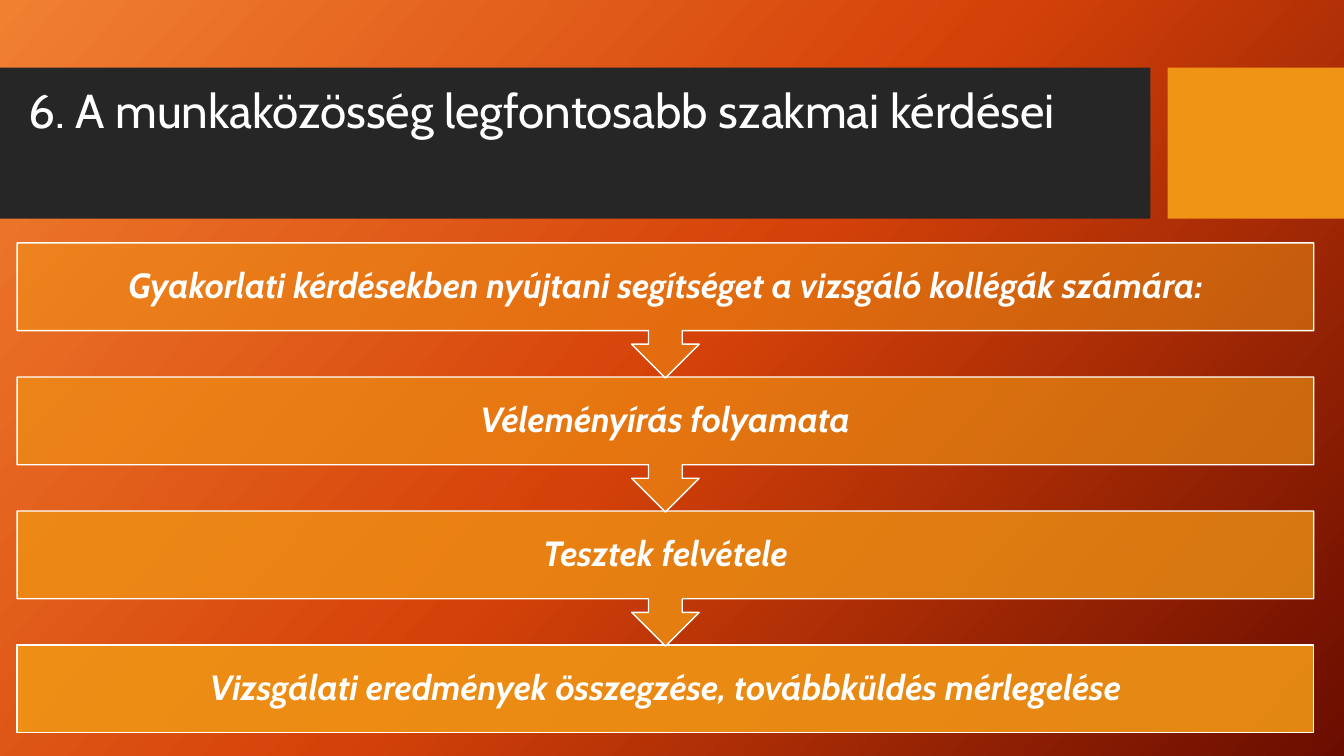
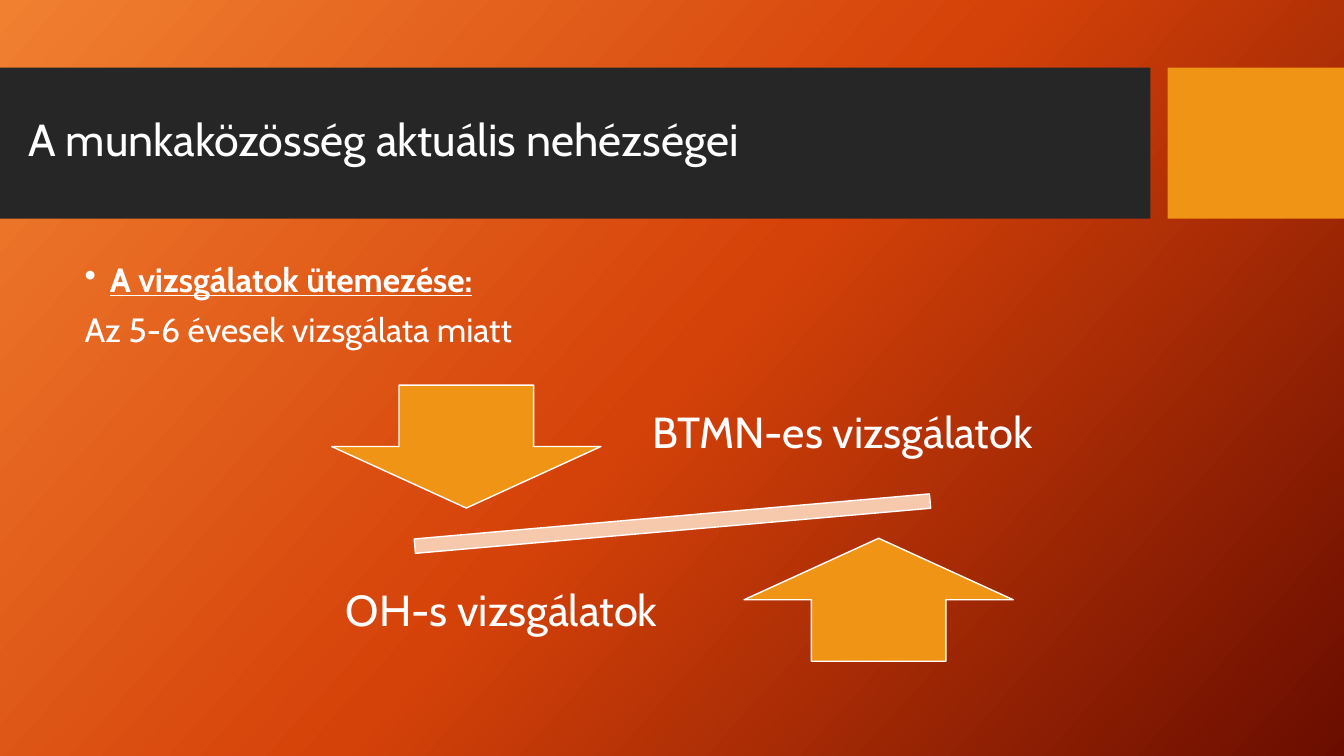
import copy
from dataclasses import dataclass

import pptx
import pptx.dml.color
import pptx.enum.shapes
import pptx.enum.text
import pptx.oxml
import pptx.oxml.ns
import pptx.util
from pptx.dml.color import RGBColor
from pptx.util import Inches

SHAPE = pptx.enum.shapes.MSO_SHAPE
ALIGN = pptx.enum.text.PP_ALIGN
ANCHOR = pptx.enum.text.MSO_ANCHOR

FONT = "Cabin"
WHITE = RGBColor(0xFF, 0xFF, 0xFF)
CHARCOAL = RGBColor(0x26, 0x26, 0x26)
AMBER = RGBColor(0xF0, 0x94, 0x15)
PEACH = RGBColor(0xF6, 0xC8, 0xAC)
BACKGROUND = (
    (0, RGBColor(0xF1, 0x80, 0x31)),
    (0.5, RGBColor(0xD5, 0x42, 0x09)),
    (1, RGBColor(0x6A, 0x0D, 0x00)),
)


@dataclass
class Box:
    left: float
    top: float
    width: float
    height: float

    def lengths(self):
        return [Inches(v) for v in (self.left, self.top, self.width, self.height)]


@dataclass
class Style:
    size: float
    bold: bool = False
    italic: bool = False
    underline: bool = False


@dataclass
class Step:
    text: str
    opacity: int


@dataclass
class Part:
    kind: int
    box: Box
    color: RGBColor = AMBER
    rotation: float = 0


@dataclass
class Label:
    text: str
    box: Box


TITLE_BAND = Box(0, 0.67, 11.41, 1.5)
ACCENT_BAND = Box(11.58, 0.67, 1.75, 1.5)
TITLE_BOX = Box(0.18, 0.82, 11.09, 1.18)
BODY_BOX = Box(0.74, 2.56, 10.51, 3.94)

STEP_STYLE = Style(25, bold=True, italic=True)
STEP_LEFT, STEP_TOP, STEP_WIDTH = 0.17, 2.41, 12.86
STEP_PITCH, CALLOUT_HEIGHT, BAR_HEIGHT = 1.33, 1.34, 0.87
STEPS = (
    Step("Gyakorlati kérdésekben nyújtani segítséget a vizsgáló kollégák számára:", 50),
    Step("Véleményírás folyamata", 63),
    Step("Tesztek felvétele", 77),
    Step("Vizsgálati eredmények összegzése, továbbküldés mérlegelése", 90),
)

SEESAW = (
    Part(SHAPE.MATH_MINUS, Box(3.18, 4.89, 6.98, 0.61), PEACH, 355),
    Part(SHAPE.DOWN_ARROW, Box(3.29, 3.82, 2.67, 1.22)),
    Part(SHAPE.UP_ARROW, Box(7.38, 5.34, 2.67, 1.22)),
)
SEESAW_LABELS = (
    Label("BTMN-es vizsgálatok", Box(6.01, 3.67, 4.69, 1.28)),
    Label("OH-s vizsgálatok", Box(2.67, 5.44, 4.61, 1.28)),
)


def set_background(master) -> None:
    fill = master.background.fill
    fill.gradient()
    fill.gradient_angle = 318
    stops = master.element.xpath("p:cSld/p:bg//a:gsLst")[0]
    stops.append(copy.deepcopy(stops[-1]))
    for stop, (position, color) in zip(fill.gradient_stops, BACKGROUND):
        stop.position = position
        stop.color.rgb = color


def add_figure(s, kind: int, box: Box, color: RGBColor, outlined: bool = True):
    sp = s.shapes.add_shape(kind, *box.lengths())
    sp.shadow.inherit = False
    sp.fill.solid()
    sp.fill.fore_color.rgb = color
    if outlined:
        sp.line.color.rgb = WHITE
        sp.line.width = pptx.util.Pt(1)
    else:
        sp.line.fill.background()
    return sp


def set_opacity(sp, percent: int) -> None:
    color = sp.element.spPr.xpath("a:solidFill/a:srgbClr")[0]
    alpha = pptx.oxml.parse_xml(
        f'<a:alpha {pptx.oxml.ns.nsdecls("a")} val="{percent * 1000}"/>')
    color.append(alpha)


def set_frame(tf, anchor, inset: float | None = None) -> None:
    tf.word_wrap = True
    tf.vertical_anchor = anchor
    if inset is not None:
        tf.margin_left = tf.margin_right = Inches(inset)
        tf.margin_top = tf.margin_bottom = Inches(inset)


def write(p, text: str, style: Style, align=ALIGN.LEFT) -> None:
    p.alignment = align
    p.line_spacing = 0.9
    r = p.add_run()
    r.text = text
    r.font.name = FONT
    r.font.size = pptx.util.Pt(style.size)
    r.font.bold = style.bold
    r.font.italic = style.italic
    r.font.underline = style.underline
    r.font.color.rgb = WHITE


def add_bullet(p) -> None:
    pPr = p._p.get_or_add_pPr()
    pPr.set("marL", str(Inches(0.25)))
    pPr.set("indent", str(Inches(-0.25)))
    pPr.append(pptx.oxml.parse_xml(
        f'<a:buChar {pptx.oxml.ns.nsdecls("a")} char="•"/>'))


def add_text_frame(s, box: Box, anchor, inset: float | None = None):
    tf = s.shapes.add_textbox(*box.lengths()).text_frame
    set_frame(tf, anchor, inset)
    return tf


def add_titled_slide(prs, title: str, size: float, anchor):
    s = prs.slides.add_slide(prs.slide_layouts[6])
    add_figure(s, SHAPE.RECTANGLE, TITLE_BAND, CHARCOAL, outlined=False)
    add_figure(s, SHAPE.RECTANGLE, ACCENT_BAND, AMBER, outlined=False)
    tf = add_text_frame(s, TITLE_BOX, anchor)
    write(tf.paragraphs[0], title, Style(size))
    return s


def build_questions(prs) -> None:
    s = add_titled_slide(
        prs, "6. A munkaközösség legfontosabb szakmai kérdései", 34, ANCHOR.TOP)
    # The lower steps go first so that each arrow tip lies over the next bar.
    for i, step in reversed(list(enumerate(STEPS))):
        last = i == len(STEPS) - 1
        kind = SHAPE.RECTANGLE if last else SHAPE.DOWN_ARROW_CALLOUT
        height = BAR_HEIGHT if last else CALLOUT_HEIGHT
        box = Box(STEP_LEFT, STEP_TOP + i * STEP_PITCH, STEP_WIDTH, height)
        sp = add_figure(s, kind, box, AMBER)
        set_opacity(sp, step.opacity)
        set_frame(sp.text_frame, ANCHOR.MIDDLE, 0.19)
        write(sp.text_frame.paragraphs[0], step.text, STEP_STYLE, ALIGN.CENTER)


def build_difficulties(prs) -> None:
    s = add_titled_slide(
        prs, "A munkaközösség aktuális nehézségei", 32, ANCHOR.MIDDLE)

    tf = add_text_frame(s, BODY_BOX, ANCHOR.TOP)
    p = tf.paragraphs[0]
    add_bullet(p)
    write(p, "A vizsgálatok ütemezése:", Style(24, bold=True, underline=True))
    p = tf.add_paragraph()
    p.space_before = pptx.util.Pt(10)
    write(p, "Az 5-6 évesek vizsgálata miatt", Style(24))

    for part in SEESAW:
        sp = add_figure(s, part.kind, part.box, part.color)
        sp.rotation = part.rotation
    for label in SEESAW_LABELS:
        tf = add_text_frame(s, label.box, ANCHOR.MIDDLE, 0.24)
        write(tf.paragraphs[0], label.text, Style(31), ALIGN.CENTER)


def main() -> None:
    prs = pptx.Presentation()
    prs.slide_width = Inches(13.33)
    prs.slide_height = Inches(7.5)
    set_background(prs.slide_master)
    build_questions(prs)
    build_difficulties(prs)
    prs.save("out.pptx")


if __name__ == "__main__":
    main()
